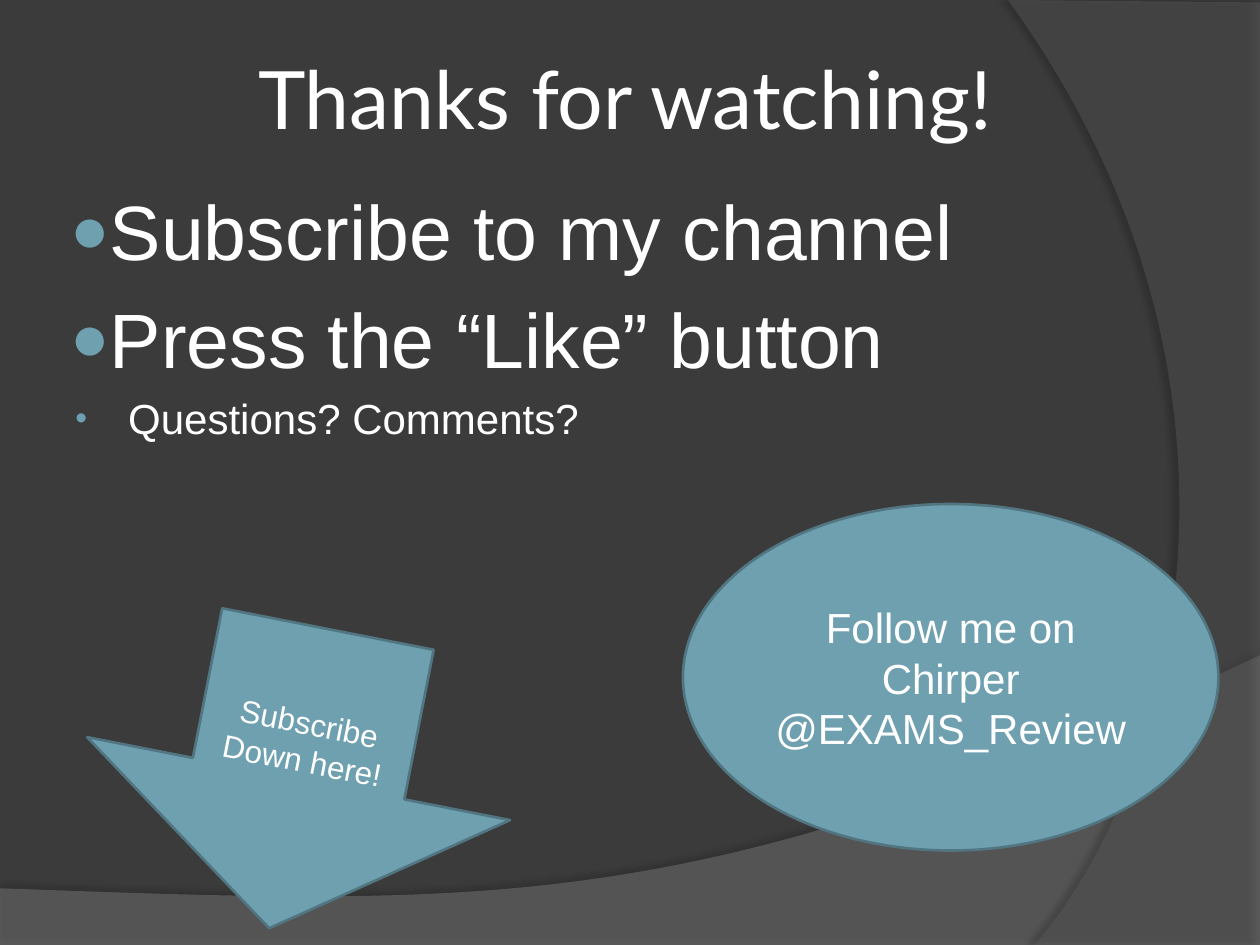
from dataclasses import dataclass

from lxml import etree
from pptx import Presentation
from pptx.dml.color import RGBColor
from pptx.enum.shapes import MSO_SHAPE
from pptx.enum.text import MSO_ANCHOR, PP_ALIGN
from pptx.oxml.ns import qn
from pptx.util import Inches, Pt

ARROW, OVAL = MSO_SHAPE.DOWN_ARROW, MSO_SHAPE.OVAL
TOP, MIDDLE = MSO_ANCHOR.TOP, MSO_ANCHOR.MIDDLE
LEFT, CENTER = PP_ALIGN.LEFT, PP_ALIGN.CENTER
COLORS = {"back": "3B3B3B", "low": "7F7F7F", "side": "5E5E5E",
          "teal": "6EA0B0", "edge": "517682", "text": "FFFFFF", "shade": "000000"}
STEPS = 60  # straight pieces per curve


@dataclass
class Band:
    color: str
    alpha: int
    corners: list  # straight outline, ending where the curve starts
    curve: list    # two control points and the end point
    shade: dict
    dark: int


@dataclass
class Badge:
    kind: int
    box: tuple
    turn: float
    size: int
    lines: list


@dataclass
class Bullet:
    text: str
    size: int
    mark: str
    scale: int
    left: float
    hang: float


BANDS = [
    Band("low", 45, [(0, 7.05), (0, 7.51), (10, 7.51), (10, 5.2)],
         [(5.59, 7.29), (3.91, 7.19), (0, 7.05)],
         {"blurRad": Pt(4), "dist": Pt(3.5), "dir": 270 * 60000}, 35),
    Band("side", 40, [(10, 0.02), (10, 7.5), (8.21, 7.5)],
         [(9.35, 6.19), (10.18, 3), (8, 0)],
         {"blurRad": Pt(4), "dist": Pt(4), "dir": 180 * 60000}, 45),
]
BULLETS = [
    Bullet("Subscribe to my channel", 44, "●", 85, 0.3, -0.3),
    Bullet("Press the “Like” button", 44, "●", 85, 0.3, -0.3),
    Bullet("Questions? Comments?", 24, "•", 80, 0.46, -0.42),
]
BADGES = [
    Badge(ARROW, (0.66, 4.97, 3.42, 2.42), 11.1, 18, ["Subscribe", "Down here!"]),
    Badge(OVAL, (5.42, 4, 4.25, 2.75), 0, 24, ["Follow me on Chirper @EXAMS_Review"]),
]


def rgb(name: str) -> RGBColor:
    return RGBColor.from_string(COLORS[name])


def node(parent, tag: str, **values):
    return etree.SubElement(parent, qn(tag), {k: str(v) for k, v in values.items()})


def trace(start: tuple, curve: list) -> list:
    """Points along a cubic curve."""
    points = [start, *curve]
    result = []
    for step in range(1, STEPS + 1):
        t = step / STEPS
        parts = ((1 - t) ** 3, 3 * t * (1 - t) ** 2, 3 * t * t * (1 - t), t ** 3)
        result.append(tuple(sum(w * p[axis] for w, p in zip(parts, points))
                            for axis in (0, 1)))
    return result


def draw_band(slide, band: Band) -> None:
    outline = band.corners + trace(band.corners[-1], band.curve)
    first, *rest = [(Inches(x), Inches(y)) for x, y in outline]
    pen = slide.shapes.build_freeform(*first)
    pen.add_line_segments(rest, close=True)
    shape = pen.convert_to_shape()
    shape.fill.solid()
    shape.fill.fore_color.rgb = rgb(band.color)
    shape.line.fill.background()
    shape.shadow.inherit = False
    props = shape.element.spPr
    node(props.find(qn("a:solidFill"))[0], "a:alpha", val=band.alpha * 1000)
    shade = node(props.find(qn("a:effectLst")), "a:outerShdw", **band.shade,
                 algn="ctr", rotWithShape=0)
    tint = node(shade, "a:srgbClr", val=COLORS["shade"])
    node(tint, "a:alpha", val=band.dark * 1000)


def write(para, text: str, size: int, align: int, font: str = "Arial") -> None:
    para.alignment = align
    run = para.add_run()
    run.text = text
    for key, value in {"name": font, "size": Pt(size)}.items():
        setattr(run.font, key, value)
    run.font.color.rgb = rgb("text")


def add_box(slide, box: tuple, anchor: int):
    frame = slide.shapes.add_textbox(*map(Inches, box)).text_frame
    style = {"word_wrap": True, "vertical_anchor": anchor,
             "margin_top": Inches(0.05), "margin_bottom": Inches(0.05)}
    for key, value in style.items():
        setattr(frame, key, value)
    return frame


def draw_bullet(para, item: Bullet) -> None:
    write(para, item.text, item.size, LEFT)
    para.space_before = Pt(item.size * 0.2)
    props = para._p.get_or_add_pPr()
    props.set("marL", str(Inches(item.left)))
    props.set("indent", str(Inches(item.hang)))
    node(node(props, "a:buClr"), "a:srgbClr", val=COLORS["teal"])
    node(props, "a:buSzPct", val=item.scale * 1000)
    node(props, "a:buFont", typeface="Arial")
    node(props, "a:buChar", char=item.mark)


def fill_lines(frame, items: list):
    """Yield a paragraph for each item."""
    for index, item in enumerate(items):
        yield (frame.add_paragraph() if index else frame.paragraphs[0]), item


def draw_badge(slide, badge: Badge) -> None:
    shape = slide.shapes.add_shape(badge.kind, *map(Inches, badge.box))
    shape.rotation = badge.turn
    shape.shadow.inherit = False
    shape.fill.solid()
    shape.fill.fore_color.rgb = rgb("teal")
    shape.line.color.rgb = rgb("edge")
    shape.line.width = Pt(1.5)
    frame = shape.text_frame
    frame.word_wrap = True
    frame.vertical_anchor = MIDDLE
    for para, line in fill_lines(frame, badge.lines):
        write(para, line, badge.size, CENTER)


def main() -> None:
    deck = Presentation()
    deck.slide_width, deck.slide_height = Inches(10), Inches(7.5)
    slide = deck.slides.add_slide(deck.slide_layouts[6])

    # Background and its curved bands
    slide.background.fill.solid()
    slide.background.fill.fore_color.rgb = rgb("back")
    for band in BANDS:
        draw_band(slide, band)

    # Title
    title = add_box(slide, (0.46, 0.19, 9, 1.17), MIDDLE)
    title.margin_left = title.margin_right = Inches(0.05)
    write(title.paragraphs[0], "Thanks for watching!", 46, CENTER, "Lato")

    # Bullet list
    body = add_box(slide, (0.46, 1.41, 9, 4.73), TOP)
    for para, item in fill_lines(body, BULLETS):
        draw_bullet(para, item)

    # Arrow and oval
    for badge in BADGES:
        draw_badge(slide, badge)

    deck.save("out.pptx")


if __name__ == "__main__":
    main()
